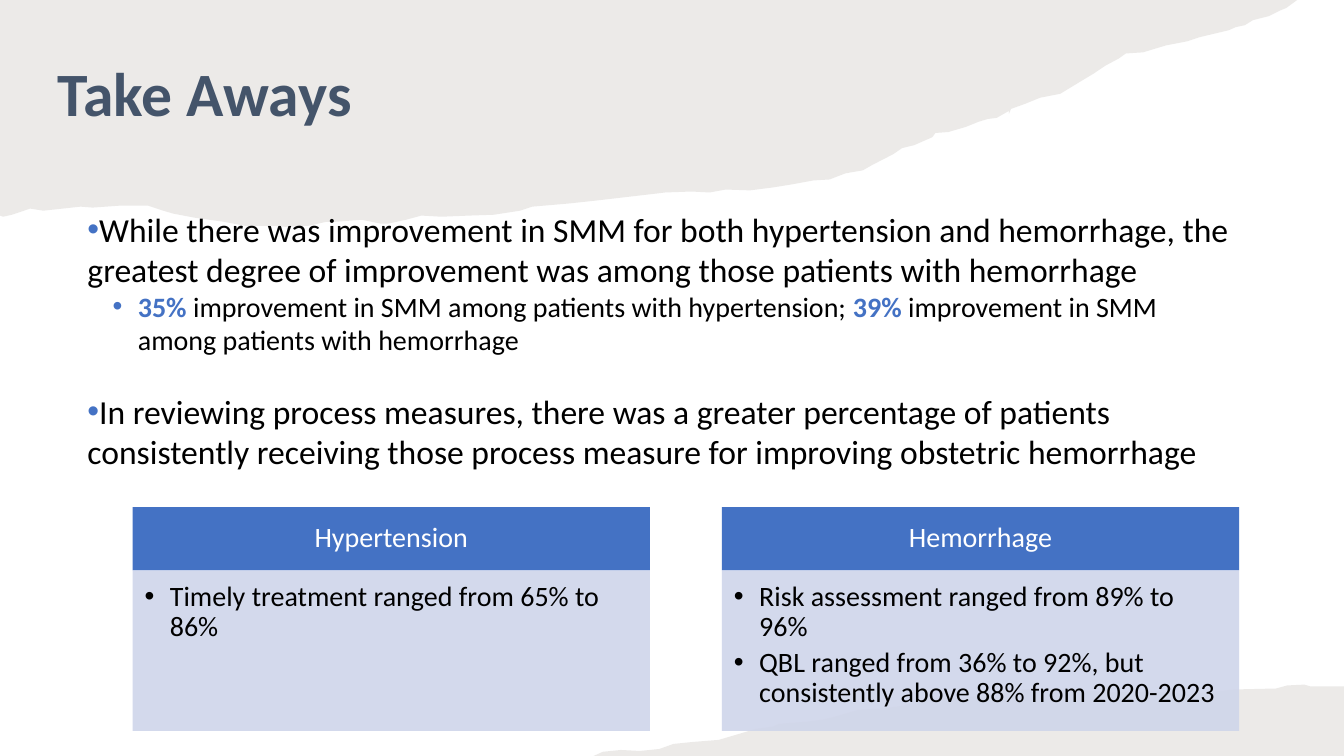
from dataclasses import dataclass

import pptx
import pptx.dml.color
import pptx.enum.shapes
import pptx.enum.text
import pptx.oxml.ns
import pptx.util
from lxml import etree

Pt = pptx.util.Pt
Align = pptx.enum.text.PP_ALIGN
Anchor = pptx.enum.text.MSO_ANCHOR


@dataclass(frozen=True)
class Theme:
    font: str = "Calibri"
    heading: str = "44546A"
    ink: str = "000000"
    accent: str = "4472C4"
    pale: str = "CFD5EA"
    paper: str = "82766A"
    white: str = "FFFFFF"
    title_size: int = 44
    point_size: int = 24
    detail_size: int = 20


TOP_TEAR = [
    (0, 0), (926.6, 0), (918.7, 5.8), (915.1, 7.2), (906.5, 11.5), (895, 14.4),
    (889.2, 18), (882.7, 19.4), (877.7, 21.6), (856.8, 26.6), (848.2, 29.5),
    (833, 32.4), (816.5, 37.4), (804.2, 38.2), (799.2, 41.8), (789.8, 46.8),
    (781.2, 52.6), (774, 56.9), (757.4, 67), (743, 69.8), (732.2, 74.2),
    (722.2, 77.8), (720.7, 81.4), (720.7, 79.2), (712, 84.2), (705.6, 85),
    (699, 87), (689.8, 90.7), (677.5, 94.3), (668.2, 95), (666, 98),
    (653, 103.7), (644.4, 105.8), (638, 110.2), (622.8, 118), (616.3, 121.7),
    (604, 123.8), (592.6, 128.2), (581, 128.9), (565.2, 131.8), (552.2, 133.9),
    (535.7, 136), (518.4, 135.4), (506.9, 137.5), (494, 136.8), (475.2, 137.5),
    (469.4, 138.2), (425.5, 143.3), (406, 145.4), (380.2, 147.6), (371.5, 150.5),
    (352.8, 153.4), (335.5, 154), (315.4, 154.8), (301, 154), (290, 157),
    (277, 159.8), (272.2, 159.8), (258.5, 157), (239.8, 158.4), (233.3, 158.4),
    (220.3, 161.3), (203.8, 162), (195.8, 161.3), (175, 161.3), (159.8, 158.4),
    (139, 155.5), (123.8, 152.6), (116.6, 150.5), (105.8, 146.9), (85.7, 146.9),
    (66.2, 148.3), (57.6, 147.6), (31, 150.5), (21.6, 149), (8.6, 153.4),
    (2.2, 154.8), (0, 154),
]
BOTTOM_TEAR = [
    (960, 540), (424, 540), (430.6, 537), (443.5, 535.7), (457, 536.4),
    (471, 535), (481, 531.4), (494.6, 530), (513.4, 528.5), (525.6, 524.9),
    (540, 520.6), (552, 519), (556.6, 517), (576, 515.5), (588, 514),
    (596, 512), (613.4, 506.9), (630.7, 506), (645.8, 504), (651, 501.8),
    (662.4, 499), (687.6, 498.2), (709, 496), (713.5, 493.2), (746, 491.8),
    (767.5, 492.5), (795, 494.6), (812, 494), (835, 494.6), (849.6, 496),
    (862.6, 494.6), (881, 492.5), (911.5, 491.8), (919.4, 489.6), (931.7, 489),
    (936, 490.3), (960, 490.3),
]
POINTS = [
    dict(spans=["While there was improvement in SMM for both hypertension and hemorrhage, "
                "the greatest degree of improvement was among those patients with hemorrhage"]),
    dict(spans=["35% ", "improvement in SMM among patients with hypertension; ",
                "39% ", "improvement in SMM among patients with hemorrhage"], detail=True),
    dict(spans=["In reviewing process measures, there was a greater percentage of patients "
                "consistently receiving those process measure for improving obstetric hemorrhage"],
         before=24.4),
]
PANELS = {
    "Hypertension": ["Timely treatment ranged from 65% to 86%"],
    "Hemorrhage": ["Risk assessment ranged from 89% to 96%",
                   "QBL ranged from 36% to 92%, but consistently above 88% from 2020-2023"],
}


class SlideBuilder:
    def __init__(self, page, theme):
        self.page = page
        self.theme = theme

    def add_span(self, para, text, size, color, bold=False):
        span = para.add_run()
        span.text = text
        span.font.name = self.theme.font
        span.font.size = Pt(size)
        span.font.bold = bold
        span.font.color.rgb = pptx.dml.color.RGBColor.from_string(color)

    def bullet(self, para, color, margin=0, hang=0):
        """Add a round bullet; call after the paragraph spacing is set."""
        props = para._p.get_or_add_pPr()
        props.set("marL", str(Pt(margin)))
        props.set("indent", str(-Pt(hang)))
        qn = pptx.oxml.ns.qn
        tint = etree.SubElement(props, qn("a:buClr"))
        etree.SubElement(tint, qn("a:srgbClr"), val=color)
        etree.SubElement(props, qn("a:buFont"), typeface="Arial")
        etree.SubElement(props, qn("a:buChar"), char="•")

    def paint(self, shape, color, opacity=100):
        shape.shadow.inherit = False
        shape.line.fill.background()
        shape.fill.solid()
        shape.fill.fore_color.rgb = pptx.dml.color.RGBColor.from_string(color)
        if opacity < 100:
            tint = shape.element.xpath("./p:spPr/a:solidFill/a:srgbClr")[0]
            etree.SubElement(tint, pptx.oxml.ns.qn("a:alpha"), val=str(opacity * 1000))

    def set_frame(self, frame, anchor, insets):
        frame.word_wrap = True
        frame.auto_size = pptx.enum.text.MSO_AUTO_SIZE.NONE
        frame.vertical_anchor = anchor
        (frame.margin_left, frame.margin_top,
         frame.margin_right, frame.margin_bottom) = map(Pt, insets)

    def title(self, text, *place):
        box = self.page.shapes.title
        box.left, box.top, box.width, box.height = map(Pt, place)
        self.set_frame(box.text_frame, Anchor.MIDDLE, (7.2, 3.6, 7.2, 3.6))
        para = box.text_frame.paragraphs[0]
        para.alignment = Align.LEFT
        para.line_spacing = 0.9
        self.add_span(para, text, self.theme.title_size, self.theme.heading, bold=True)

    def torn_paper(self, outline):
        """Draw a torn paper edge behind the title."""
        corners = [(Pt(x), Pt(y)) for x, y in outline]
        builder = self.page.shapes.build_freeform(*corners[0])
        builder.add_line_segments(corners[1:], close=True)
        tear = builder.convert_to_shape()
        self.paint(tear, self.theme.paper, opacity=15)
        self.page.shapes.title.element.addprevious(tear.element)

    def points(self, items, *place):
        theme = self.theme
        frame = self.page.shapes.add_textbox(*map(Pt, place)).text_frame
        self.set_frame(frame, Anchor.TOP, (7.2, 3.6, 7.2, 3.6))
        for index, item in enumerate(items):
            para = frame.add_paragraph() if index else frame.paragraphs[0]
            para.space_before = Pt(item.get("before", 0))
            detail = item.get("detail", False)
            para.level = int(detail)
            self.bullet(para, theme.accent, *((36, 18) if detail else (0, 0)))
            for text in item["spans"]:
                figure = text.endswith("% ")
                self.add_span(para, text, theme.detail_size if detail else theme.point_size,
                              theme.accent if figure else theme.ink, bold=figure)

    def block(self, texts, place, fill, color, header):
        """Draw one rectangle of a panel, either its header or its bulleted body."""
        kind = pptx.enum.shapes.MSO_SHAPE.RECTANGLE
        box = self.page.shapes.add_shape(kind, *map(Pt, place))
        self.paint(box, fill, opacity=100 if header else 90)
        frame = box.text_frame
        if header:
            self.set_frame(frame, Anchor.MIDDLE, (11.5, 6.5, 11.5, 6.5))
        else:
            self.set_frame(frame, Anchor.TOP, (8.6, 8.6, 11.5, 12.2))
        for index, text in enumerate(texts):
            para = frame.add_paragraph() if index else frame.paragraphs[0]
            para.alignment = Align.CENTER if header else Align.LEFT
            para.line_spacing = 0.9
            if not header:
                para.space_after = Pt(3.6)
                para.level = 1
                self.bullet(para, color, margin=18, hang=18)
            self.add_span(para, text, self.theme.detail_size, color)

    def panel(self, heading, texts, left):
        theme, top, width, header_height = self.theme, 362.2, 369.4, 45.3
        self.block([heading], (left, top, width, header_height),
                   theme.accent, theme.white, header=True)
        self.block(texts, (left, top + header_height, width, 114.5),
                   theme.pale, theme.ink, header=False)


def main():
    deck = pptx.Presentation()
    deck.slide_width, deck.slide_height = Pt(960), Pt(540)
    layout = deck.slide_layouts.get_by_name("Title Only")
    slide = SlideBuilder(deck.slides.add_slide(layout), Theme())
    for outline in (TOP_TEAR, BOTTOM_TEAR):
        slide.torn_paper(outline)
    slide.title("Take Aways", 33.8, 16.6, 739.4, 105.1)
    slide.points(POINTS, 55.4, 145.4, 836.6, 196.6)
    for column, (heading, texts) in enumerate(PANELS.items()):
        slide.panel(heading, texts, left=94.8 + column * 420.9)
    deck.save("out.pptx")


if __name__ == "__main__":
    main()
